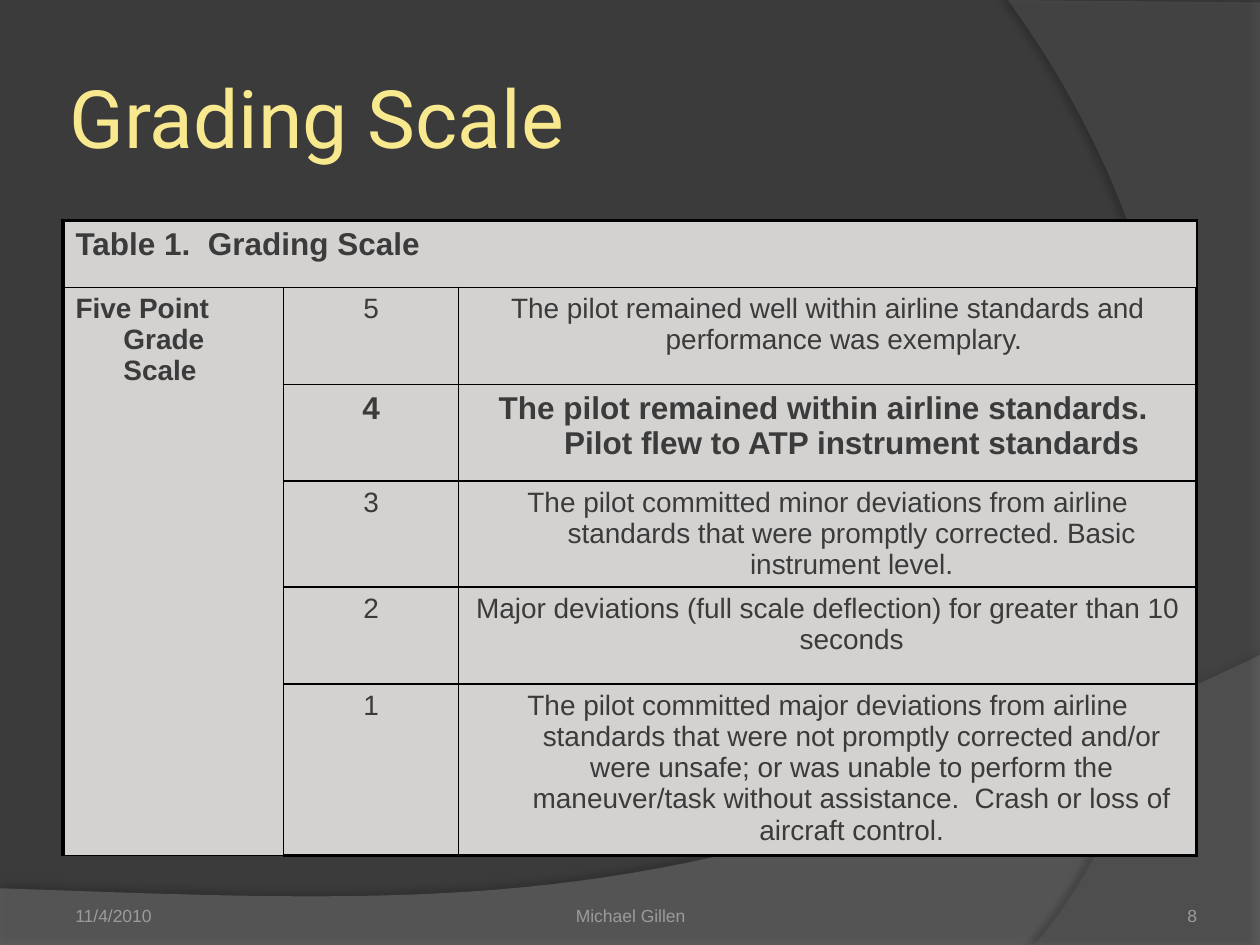
from lxml import etree
from pptx import Presentation
from pptx.dml.color import RGBColor
from pptx.enum.text import MSO_ANCHOR as Anchor, PP_ALIGN as Align
from pptx.oxml.ns import qn
from pptx.util import Inches, Pt

COLORS = {
    "background": "3B3B3B", "wave": "7F7F7F", "arc": "5E5E5E",
    "title": "F9E98E", "cell": "D4D2D0", "text": "3B3B3B",
    "footer": "9D9B9A", "line": "000000",
}
GRADES = [
    ("5", "The pilot remained well within airline standards and performance was exemplary.  "),
    ("4", "The pilot remained within airline standards.  Pilot flew to ATP instrument standards"),
    ("3", "The pilot committed minor deviations from airline standards that were promptly "
          "corrected. Basic instrument level."),
    ("2", "Major deviations (full scale deflection) for greater than 10 seconds"),
    ("1", "The pilot committed major deviations from airline standards that were not promptly "
          "corrected and/or were unsafe; or was unable to perform the maneuver/task without "
          "assistance.  Crash or loss of aircraft control."),
]
HIGHLIGHTED_GRADE = "4"
COLUMN_WIDTHS = [1.75, 1.39, 5.86]
ROW_HEIGHTS = [0.53, 0.77, 0.77, 0.77, 0.77, 1.36]


def color(name):
    return RGBColor.from_string(COLORS[name])


def add_xml(parent, tag, **attributes):
    return etree.SubElement(parent, qn(tag), {key: str(value) for key, value in attributes.items()})


def curve(start, control_1, control_2, end, steps=40):
    points = []
    for step in range(steps + 1):
        t = step / steps
        weights = ((1 - t) ** 3, 3 * t * (1 - t) ** 2, 3 * t ** 2 * (1 - t), t ** 3)
        corners = (start, control_1, control_2, end)
        points.append(tuple(sum(w * c[axis] for w, c in zip(weights, corners)) for axis in (0, 1)))
    return points


class SlideBuilder:
    font = "Arial"

    def __init__(self, slide):
        self.slide = slide
        slide.background.fill.solid()
        slide.background.fill.fore_color.rgb = color("background")

    def run(self, paragraph, text, size, color_name, bold=False, font=None):
        run = paragraph.add_run()
        run.text = text
        run.font.name = font or self.font
        run.font.size = Pt(size)
        run.font.bold = bold
        run.font.color.rgb = color(color_name)

    def frame(self, shape, anchor, margins):
        frame = shape.text_frame
        frame.word_wrap = True
        frame.vertical_anchor = anchor
        frame.margin_left, frame.margin_top, frame.margin_right, frame.margin_bottom = map(Inches, margins)
        return frame.paragraphs[0]

    def swoosh(self, points, color_name, opacity, shadow_opacity, distance, direction):
        points = [(Inches(x), Inches(y)) for x, y in points]
        builder = self.slide.shapes.build_freeform(*points[0])
        builder.add_line_segments(points[1:], close=True)
        shape = builder.convert_to_shape()
        shape.shadow.inherit = False
        shape.line.fill.background()
        shape.fill.solid()
        shape.fill.fore_color.rgb = color(color_name)
        properties = shape._element.spPr
        add_xml(properties.find(f"{qn('a:solidFill')}/{qn('a:srgbClr')}"), "a:alpha", val=opacity * 1000)
        shadow = add_xml(properties.find(qn("a:effectLst")), "a:outerShdw", blurRad=Pt(4),
                         dist=Pt(distance), dir=direction * 60000, algn="ctr", rotWithShape=0)
        shadow_color = add_xml(shadow, "a:srgbClr", val=COLORS["line"])
        add_xml(shadow_color, "a:alpha", val=shadow_opacity * 1000)

    def title(self, text, left, top, width, height):
        shape = self.slide.shapes.title
        self.slide.shapes._spTree.append(shape._element)
        shape.left, shape.top, shape.width, shape.height = map(Inches, (left, top, width, height))
        paragraph = self.frame(shape, Anchor.MIDDLE, (0.05,) * 4)
        paragraph.alignment = Align.LEFT
        self.run(paragraph, text, 46, "title", font="Roboto")

    def footer(self, text, left, width, align, margins):
        box = self.slide.shapes.add_textbox(*map(Inches, (left, 6.83, width, 0.52)))
        paragraph = self.frame(box, Anchor.BOTTOM, margins)
        paragraph.alignment = align
        self.run(paragraph, text, 10, "footer")

    def table(self, left, top):
        shape = self.slide.shapes.add_table(
            len(ROW_HEIGHTS), len(COLUMN_WIDTHS),
            *map(Inches, (left, top, sum(COLUMN_WIDTHS), sum(ROW_HEIGHTS))))
        table = shape.table
        table.first_row = table.horz_banding = False
        for column, width in zip(table.columns, COLUMN_WIDTHS):
            column.width = Inches(width)
        for row, height in zip(table.rows, ROW_HEIGHTS):
            row.height = Inches(height)
        last_row, last_column = len(ROW_HEIGHTS) - 1, len(COLUMN_WIDTHS) - 1
        for r in range(last_row + 1):
            for c in range(last_column + 1):
                cell = table.cell(r, c)
                self.borders(cell, {
                    "L": 2 if c == 0 else 0.75, "R": 2 if c == last_column else 0.75,
                    "T": 2 if r == 0 else 1, "B": 2 if r == last_row else 1})
                cell.fill.solid()
                cell.fill.fore_color.rgb = color("cell")
        table.cell(0, 0).merge(table.cell(0, last_column))
        table.cell(1, 0).merge(table.cell(last_row, 0))
        return table

    def borders(self, cell, widths):
        properties = cell._tc.get_or_add_tcPr()
        for side, width in widths.items():
            line = add_xml(properties, f"a:ln{side}", w=Pt(width))
            add_xml(add_xml(line, "a:solidFill"), "a:srgbClr", val=COLORS["line"])

    def cell_text(self, cell, lines, size, bold=False, align=Align.LEFT):
        paragraph = cell.text_frame.paragraphs[0]
        paragraph.alignment = align
        properties = paragraph._p.get_or_add_pPr()
        properties.set("marL", str(Inches(0.38)))
        properties.set("indent", str(-Inches(0.38)))
        for index, line in enumerate(lines):
            if index:
                paragraph.add_line_break()
            self.run(paragraph, line, size, "text", bold)


def main():
    presentation = Presentation()
    presentation.slide_width, presentation.slide_height = Inches(10), Inches(7.5)
    builder = SlideBuilder(presentation.slides.add_slide(presentation.slide_layouts[5]))

    wave = [(0, 7.5), (10, 7.5)] + curve((10, 5.2), (5.59, 7.29), (3.91, 7.19), (0, 7.05))
    arc = [(10, 0.02), (10, 7.5)] + curve((8.21, 7.5), (9.35, 6.19), (10.18, 3), (8, 0))
    builder.swoosh(wave, "wave", 45, 35, 3.5, 270)
    builder.swoosh(arc, "arc", 40, 45, 4, 180)
    builder.title("Grading Scale", 0.5, 0.3, 9, 1.25)

    table = builder.table(0.5, 1.75)
    builder.cell_text(table.cell(0, 0), ["Table 1.  Grading Scale"], 18, True)
    builder.cell_text(table.cell(1, 0), ["Five Point", "Grade Scale"], 16, True)
    for row, grade in enumerate(GRADES, start=1):
        bold = grade[0] == HIGHLIGHTED_GRADE
        for column, text in enumerate(grade, start=1):
            builder.cell_text(table.cell(row, column), [text], 18 if bold else 16, bold, Align.CENTER)

    builder.footer("11/4/2010", 0.5, 2.33, Align.LEFT, (0.1, 0.05, 0.1, 0))
    builder.footer("8", 7.17, 2.33, Align.RIGHT, (0, 0, 0, 0))
    builder.footer("Michael Gillen", 3.42, 3.17, Align.CENTER, (0, 0.05, 0, 0))
    presentation.save("out.pptx")


if __name__ == "__main__":
    main()
